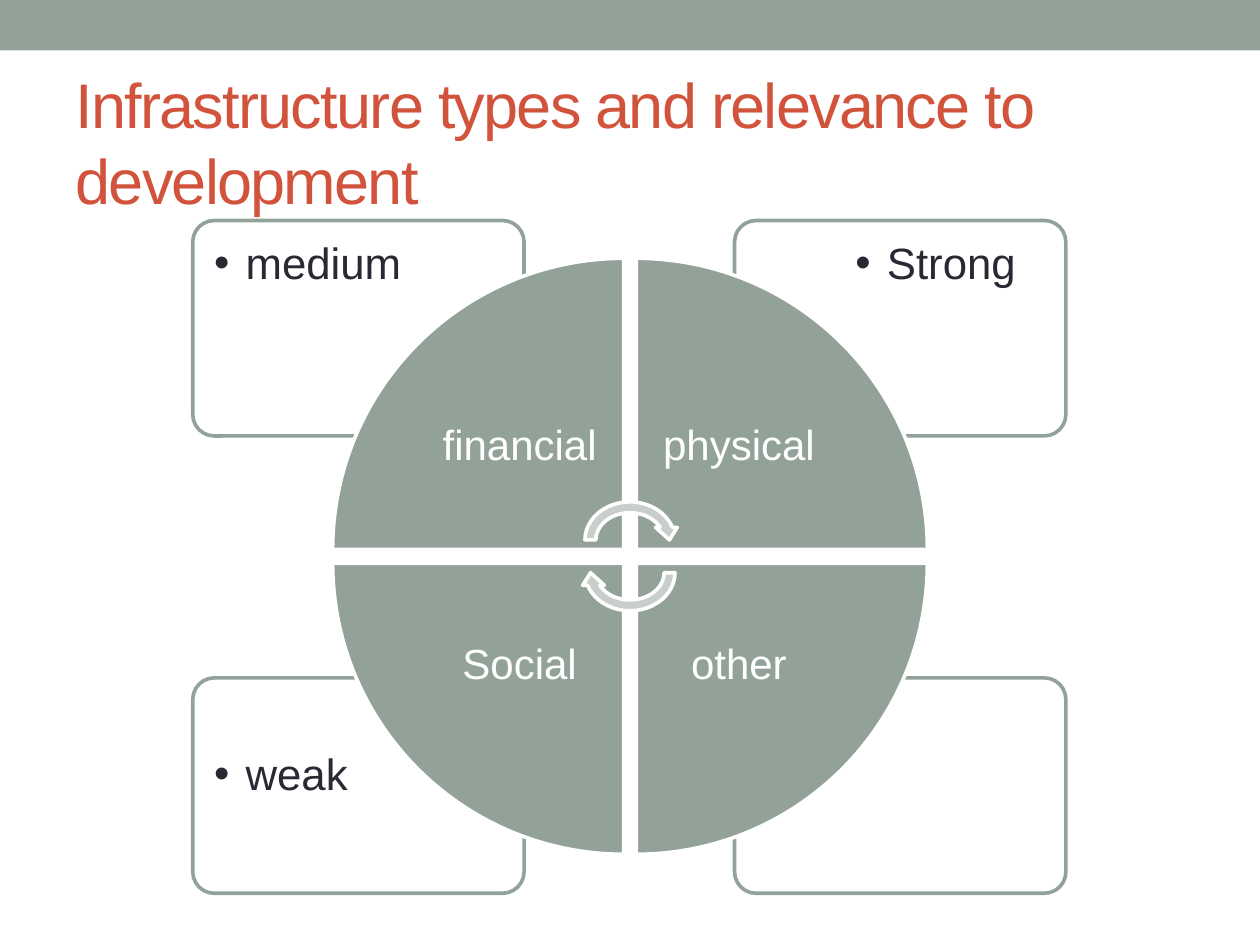
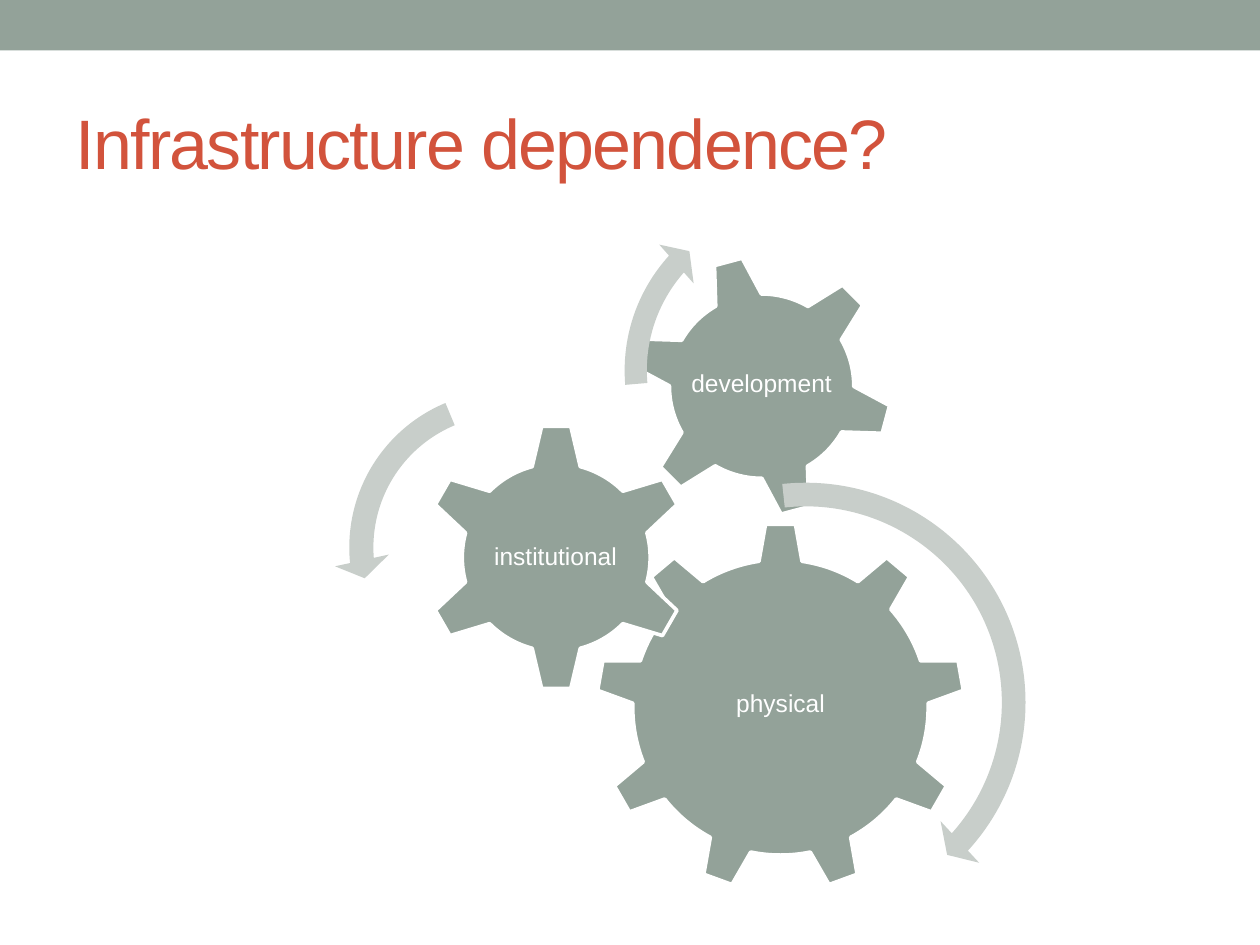
from dataclasses import dataclass

from lxml import etree
from pptx import Presentation
from pptx.dml.color import RGBColor
from pptx.enum.shapes import MSO_SHAPE
from pptx.enum.text import MSO_ANCHOR, MSO_AUTO_SIZE, PP_ALIGN
from pptx.oxml.ns import qn
from pptx.util import Emu, Pt

PX = 9144  # EMU per px, 100 px to the inch
FONT = "Arial"
COLORS = {
    "sage": "93A299",
    "pale": "C8CECA",
    "title": "D2533C",
    "text": "292934",
    "white": "FFFFFF",
}
LINE_WIDTH = Pt(2.08)

RECT = MSO_SHAPE.RECTANGLE
ROUND_RECT = MSO_SHAPE.ROUNDED_RECTANGLE
WEDGE = MSO_SHAPE.PIE_WEDGE
ARROW = MSO_SHAPE.CIRCULAR_ARROW
LEFT_ARROW = MSO_SHAPE.LEFT_CIRCULAR_ARROW
GEAR_6, GEAR_9 = MSO_SHAPE.GEAR_6, MSO_SHAPE.GEAR_9
LEFT, CENTER = PP_ALIGN.LEFT, PP_ALIGN.CENTER
TOP, MIDDLE = MSO_ANCHOR.TOP, MSO_ANCHOR.MIDDLE
NO_FIT = MSO_AUTO_SIZE.NONE


@dataclass
class Quadrant:
    label: str
    col: int
    row: int
    rotation: int
    rating: str = ""


@dataclass
class Gear:
    label: str
    kind: MSO_SHAPE
    box: tuple
    label_box: tuple
    rotation: int = 0


@dataclass
class Turn:
    kind: MSO_SHAPE
    box: tuple
    adjustments: tuple


QUADRANTS = [
    Quadrant("financial", 0, 0, 0, "medium"),
    Quadrant("physical", 1, 0, 90, "Strong"),
    Quadrant("other", 1, 1, 180),
    Quadrant("Social", 0, 1, 270, "weak"),
]
GEARS = [
    Gear("physical", GEAR_9, (473, 415, 293, 293), (532, 484, 175, 151)),
    Gear("institutional", GEAR_6, (335, 336, 213, 213), (388, 390, 106, 105)),
    Gear("development", GEAR_6, (500, 202, 209, 209), (546, 247, 117, 117), 345),
]
TURNS = [
    Turn(ARROW, (452, 370, 375, 375), (0.05, 2.99, 25.3, 158.31, 0.06)),
    Turn(LEFT_ARROW, (265, 298, 273, 273), (0.07, 4.3, 104.89, 148.38, 0.08)),
    Turn(ARROW, (484, 147, 294, 294), (0.06, 3.94, 133.14, 105.08, 0.07)),
]


def px(*lengths: int) -> list:
    return [Emu(n * PX) for n in lengths]


def rgb(name: str) -> RGBColor:
    return RGBColor.from_string(COLORS[name])


def apply(target, values: dict) -> None:
    for name, value in values.items():
        setattr(target, name, value)


def add_shape(shapes, kind, box: tuple, fill: str, line: str = "",
              rotation: int = 0, adjustments: tuple = ()):
    sp = shapes.add_shape(kind, *px(*box))
    sp.shadow.inherit = False
    sp.rotation = rotation
    for i, value in enumerate(adjustments):
        sp.adjustments[i] = value
    sp.fill.solid()
    sp.fill.fore_color.rgb = rgb(fill)
    if line:
        sp.line.color.rgb = rgb(line)
        sp.line.width = LINE_WIDTH
    else:
        sp.line.fill.background()
    return sp


def write(tf, text: str, size: int, color: str, align, frame: dict):
    """Fill a text frame with one formatted paragraph."""
    apply(tf, {"word_wrap": True, "auto_size": NO_FIT, **frame})
    p = tf.paragraphs[0]
    p.alignment = align
    r = p.add_run()
    r.text = text
    apply(r.font, {"name": FONT, "size": Pt(size)})
    r.font.color.rgb = rgb(color)
    return p


def add_label(shapes, box: tuple, text: str, size: int, inset: int,
              color: str = "white", align=CENTER, anchor=MIDDLE):
    tf = shapes.add_textbox(*px(*box)).text_frame
    sides = ("left", "top", "right", "bottom")
    frame = {f"margin_{side}": Emu(inset * PX) for side in sides}
    p = write(tf, text, size, color, align, {**frame, "vertical_anchor": anchor})
    p.line_spacing = 0.9
    return p


def add_bullet(p, indent: int) -> None:
    pPr = p._p.get_or_add_pPr()
    pPr.set("marL", str(indent * PX))
    pPr.set("indent", str(-indent * PX))
    etree.SubElement(pPr, qn("a:buFont")).set("typeface", FONT)
    etree.SubElement(pPr, qn("a:buChar")).set("char", "•")


def set_opacity(sp, percent: int) -> None:
    color = sp.fill._xPr.find(qn("a:solidFill"))[0]
    etree.SubElement(color, qn("a:alpha")).set("val", str(percent * 1000))


def add_slide(prs, layout, title: str, size: int):
    s = prs.slides.add_slide(layout)
    sp = s.shapes.title
    apply(sp, dict(zip(("left", "top", "width", "height"), px(50, 58, 900, 108))))
    p = write(sp.text_frame, title, size, "title", LEFT, {"vertical_anchor": MIDDLE})
    p.runs[0].font._element.set("spc", "-100")
    return s


def draw_cycle(shapes) -> None:
    # Corner boxes with their ratings
    for q in reversed(QUADRANTS):
        box = (153 + 430 * q.col, 175 + 363 * q.row, 263, 171)
        sp = add_shape(shapes, ROUND_RECT, box, "white", "sage", adjustments=(0.1,))
        set_opacity(sp, 90)
        if q.rating:
            box = (157 + 509 * q.col, 179 + 405 * q.row, 177, 121)
            add_bullet(add_label(shapes, box, q.rating, 25, 13, "text", LEFT, TOP), 25)
    # Wedges of the circle
    for q in QUADRANTS:
        box = (264 + 241 * q.col, 205 + 242 * q.row, 231, 231)
        add_shape(shapes, WEDGE, box, "sage", "white", q.rotation)
        box = (331 + 174 * q.col, 273 + 174 * q.row, 163, 163)
        add_label(shapes, box, q.label, 24, 19)
    # Arrows round the centre
    for i in range(2):
        add_shape(shapes, ARROW, (460, 394 + 26 * i, 80, 69), "pale", "white", 180 * i)


def draw_gears(shapes) -> None:
    for g in GEARS:
        add_shape(shapes, g.kind, g.box, "sage", "white", g.rotation)
        add_label(shapes, g.label_box, g.label, 14, 2)
    for t in TURNS:
        add_shape(shapes, t.kind, t.box, "pale", adjustments=t.adjustments)


def main() -> None:
    prs = Presentation()
    prs.slide_width, prs.slide_height = px(1000, 750)
    layout = prs.slide_layouts[5]

    # Infrastructure types
    s = add_slide(prs, layout, "Infrastructure types and relevance to development", 36)
    draw_cycle(s.shapes.add_group_shape().shapes)

    # Shared top band, moved to the layout
    band = add_shape(s.shapes, RECT, (0, 0, 1000, 40), "sage")
    layout.shapes.element.insert(2, band.element)

    # Infrastructure dependence
    s = add_slide(prs, layout, "Infrastructure dependence?", 40)
    draw_gears(s.shapes.add_group_shape().shapes)

    prs.save("out.pptx")


if __name__ == "__main__":
    main()
